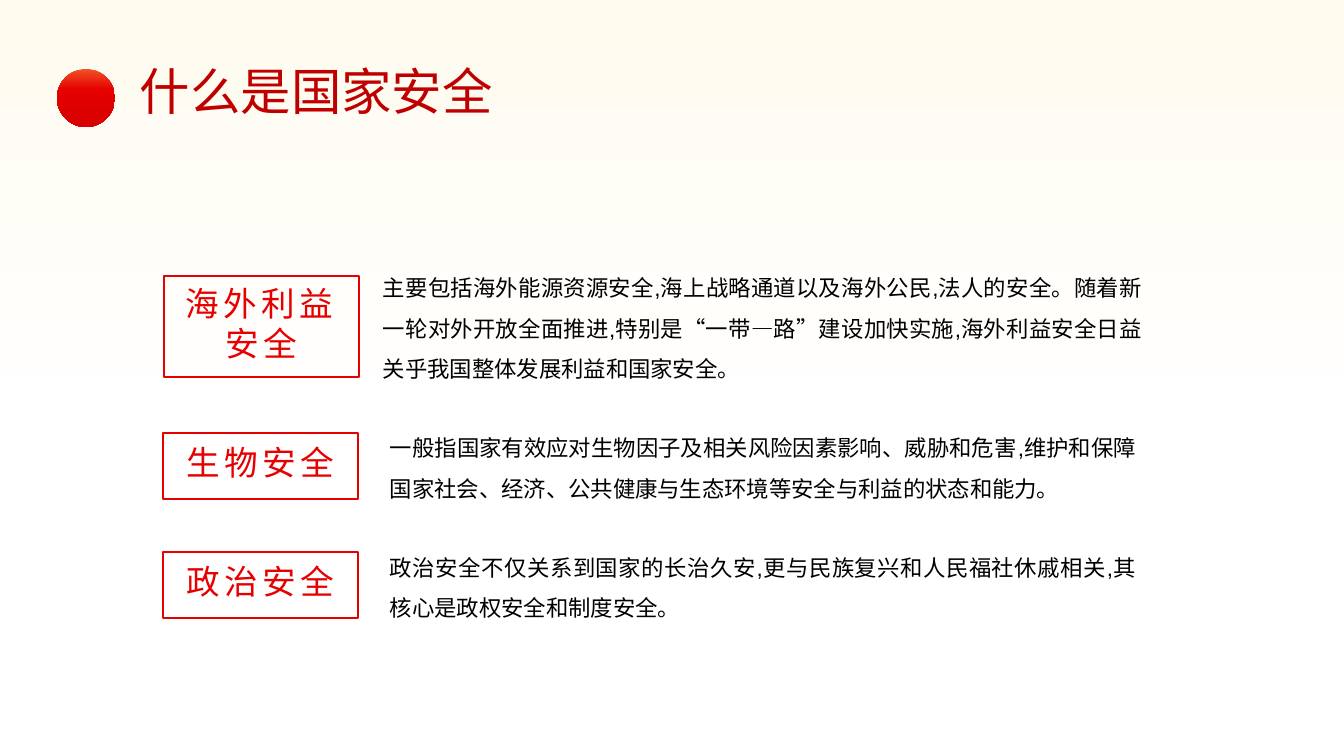
from lxml.etree import SubElement
from pptx import Presentation
from pptx.dml.color import RGBColor
from pptx.enum.shapes import MSO_SHAPE as Kind
from pptx.enum.text import MSO_ANCHOR as Anchor, MSO_AUTO_SIZE as Fit, PP_ALIGN as Align
from pptx.oxml.ns import qn
from pptx.util import Emu, Inches, Pt

RED = RGBColor(0xE6, 0x00, 0x00)
DARK = RGBColor(0xC0, 0x00, 0x00)
BLACK = RGBColor(0x00, 0x00, 0x00)
WHITE = RGBColor(0xFF, 0xFF, 0xFF)
CREAM = RGBColor(0xFE, 0xFB, 0xEF)
GLOW = RGBColor(0xF0, 0x53, 0x27)
DEEP = RGBColor(0xD6, 0x00, 0x00)
SCALE = 914400 / 100.8
WIDE, HIGH = 1344, 756
HAN = "Noto Sans CJK SC"

TITLE = {"size": Pt(36), "color": DARK, "name": HAN}
LABEL = {"size": Pt(24), "color": RED, "name": HAN}
BODY = {"size": Pt(16), "color": BLACK, "name": "Arial"}
FRAME = {"vertical_anchor": Anchor.MIDDLE, "word_wrap": True, "margin_bottom": Inches(0.12)}
GROW = {"word_wrap": True, "auto_size": Fit.SHAPE_TO_FIT_TEXT}

ROWS = [
    ("海外利益安全", (164, 276, 195, 101), (373, 256, 779, 132),
     "主要包括海外能源资源安全,海上战略通道以及海外公民,法人的安全。随着新一轮对外开放全面推进,"
     "特别是“一带—路”建设加快实施,海外利益安全日益关乎我国整体发展利益和国家安全。"),
    ("生物安全", (163, 433, 195, 66), (380, 416, 766, 92),
     "一般指国家有效应对生物因子及相关风险因素影响、威胁和危害,维护和保障国家社会、经济、"
     "公共健康与生态环境等安全与利益的状态和能力。"),
    ("政治安全", (163, 552, 195, 66), (380, 536, 766, 92),
     "政治安全不仅关系到国家的长治久安,更与民族复兴和人民福社休戚相关,其核心是政权安全和制度安全。"),
]


def px(num):
    """Turn pixels into EMU."""
    return Emu(round(num * SCALE))


def apply(item, props):
    """Set each attribute of an item from a dict."""
    for key, val in props.items():
        setattr(item, key, val)


class Deck:
    """Hold the style and the current slide."""

    def __init__(self):
        """Open a deck with one blank slide."""
        self.prs = Presentation()
        apply(self.prs, {"slide_width": px(WIDE), "slide_height": px(HIGH)})
        self.slide = self.prs.slides.add_slide(self.prs.slide_layouts[6])

    def shape(self, kind, box):
        """Add a plain preset shape."""
        shape = self.slide.shapes.add_shape(kind, *map(px, box))
        shape.shadow.inherit = False
        return shape

    def shade(self, kind, box, stops):
        """Add a shape filled from top to bottom by colour stops."""
        shape = self.shape(kind, box)
        shape.line.fill.background()
        shape.fill.gradient()
        shape.fill.gradient_angle = 270
        group = shape._element.spPr.find(qn("a:gradFill")).find(qn("a:gsLst"))
        for old in list(group):
            group.remove(old)
        for pos, color in stops:
            stop = SubElement(group, qn("a:gs"), pos=str(pos * 1000))
            SubElement(stop, qn("a:srgbClr"), val=str(color))

    def fill(self, shape, text, style, frame, para, space=0):
        """Put one styled paragraph in a shape."""
        apply(shape.text_frame, frame)
        line = shape.text_frame.paragraphs[0]
        apply(line, para)
        run = line.add_run()
        run.text = text
        for key, val in style.items():
            if key == "color":
                run.font.color.rgb = val
            else:
                setattr(run.font, key, val)
        props = run._r.get_or_add_rPr()
        props.set("lang", "zh-CN")
        if space:
            props.set("spc", str(space * 100))
        SubElement(props, qn("a:ea"), typeface=HAN)

    def text(self, box, text, style, gap=1.0):
        """Add a justified text box."""
        shape = self.slide.shapes.add_textbox(*map(px, box))
        para = {"alignment": Align.JUSTIFY, "line_spacing": gap}
        self.fill(shape, text, style, GROW, para)

    def label(self, box, text):
        """Add a red outlined label."""
        shape = self.shape(Kind.RECTANGLE, box)
        shape.fill.background()
        shape.line.color.rgb = RED
        shape.line.width = Pt(1)
        self.fill(shape, text, LABEL, FRAME, {"alignment": Align.CENTER}, 3)


def main():
    """Build and save the slide."""
    deck = Deck()
    deck.shade(Kind.RECTANGLE, (0, 0, WIDE, HIGH), [(0, CREAM), (57, WHITE)])
    deck.text((130, 55, 407, 72), "什么是国家安全", TITLE)
    deck.shade(Kind.OVAL, (57, 69, 58, 58), [(0, GLOW), (36, RED), (100, DEEP)])
    for name, frame, area, text in ROWS:
        deck.label(frame, name)
        deck.text(area, text, BODY, 1.5)
    deck.prs.save("out.pptx")


if __name__ == "__main__":
    main()
